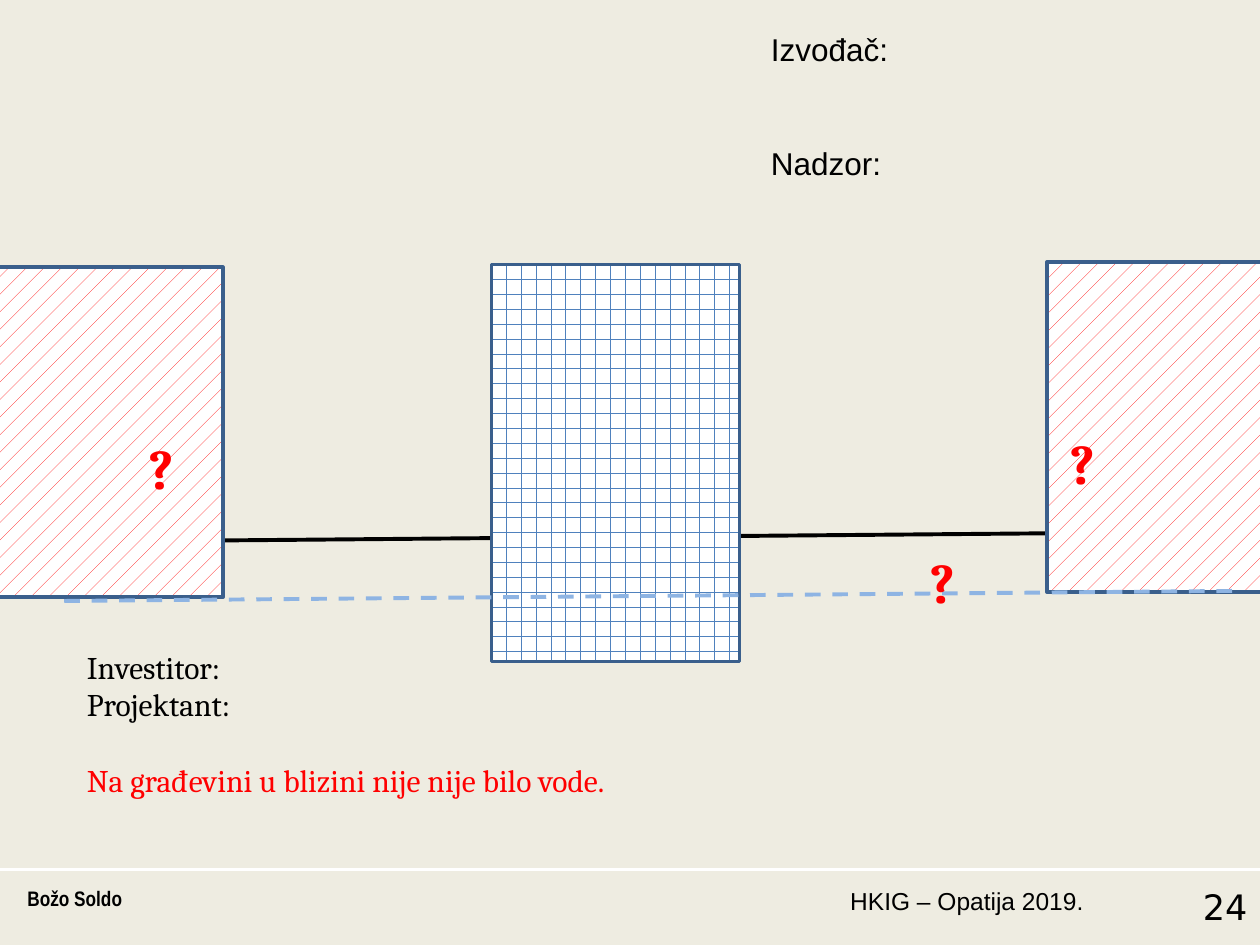
from lxml.etree import SubElement
from pptx import Presentation
from pptx.dml.color import RGBColor
from pptx.enum.dml import MSO_LINE, MSO_PATTERN
from pptx.enum.shapes import MSO_CONNECTOR, MSO_SHAPE
from pptx.enum.text import MSO_AUTO_SIZE, PP_ALIGN
from pptx.oxml.ns import qn
from pptx.util import Inches, Pt

COLORS = {
    "background": "EEECE1",
    "white": "FFFFFF",
    "black": "000000",
    "red": "FF0000",
    "blue": "4F81BD",
    "outline": "3A5F8C",
    "water": "8EB4E3",
}

FOOTERS = [
    ("HKIG – Opatija 2019.", 6.57, 2.13, "Arial", 14, False, PP_ALIGN.RIGHT),
    ("Božo Soldo", 0.12, 6.54, "Arial Narrow", 12, True, PP_ALIGN.LEFT),
    ("24", 8.78, 1.22, "DejaVu Sans", 20, False, PP_ALIGN.RIGHT),
]
FOOTER_TOP, FOOTER_HEIGHT = 6.98, 0.52

BUILDING_WIDTH = 1.97
BUILDINGS = [
    (3.9, 2.1, 3.15, MSO_PATTERN.HORIZONTAL_BRICK, "blue"),
    (-0.2, 2.12, 2.62, MSO_PATTERN.PERCENT_5, "red"),
    (8.31, 2.08, 2.62, MSO_PATTERN.PERCENT_5, "red"),
]

FOOTER_RULE = ((0, 6.9), (10, 6.9))
GROUND_LEVEL = ((0.51, 4.3), (9.8, 4.22))
WATER_LEVEL = ((0.51, 4.77), (9.8, 4.69))

QUESTION_MARKS = [(7.28, 4.3), (8.39, 3.35), (1.08, 3.39)]

NOTES = [
    ((6.02, 0.19, 2.13, 1.31), "Arial",
     [("Izvođač:", "black", 0), ("Nadzor:", "black", 43.5)]),
    ((0.59, 5.09, 4.92, 1.31), "Cambria",
     [("Investitor:", "black", 0), ("Projektant:", "black", 0),
      ("Na građevini u blizini nije nije bilo vode.", "red", 21.7)]),
]


def color(name):
    return RGBColor.from_string(COLORS[name])


def add_line(slide, ends, line_color, width, dash=None):
    (x1, y1), (x2, y2) = ends
    connector = slide.shapes.add_connector(
        MSO_CONNECTOR.STRAIGHT, Inches(x1), Inches(y1), Inches(x2), Inches(y2))
    connector.line.color.rgb = color(line_color)
    connector.line.width = Pt(width)
    if dash:
        connector.line.dash_style = dash
    SubElement(connector._element.spPr, qn("a:effectLst"))


def add_building(slide, left, top, height, pattern, pattern_color):
    shape = slide.shapes.add_shape(
        MSO_SHAPE.RECTANGLE, Inches(left), Inches(top), Inches(BUILDING_WIDTH), Inches(height))
    shape.shadow.inherit = False
    shape.fill.patterned()
    shape.fill.pattern = pattern
    shape.fill.fore_color.rgb = color(pattern_color)
    shape.fill.back_color.rgb = color("white")
    shape.line.color.rgb = color("outline")
    shape.line.width = Pt(2)


def add_text(slide, box, lines, font_name, size, bold=False,
             align=PP_ALIGN.LEFT, wrap=True, grow=True):
    frame = slide.shapes.add_textbox(*map(Inches, box)).text_frame
    frame.word_wrap = wrap
    frame.auto_size = MSO_AUTO_SIZE.SHAPE_TO_FIT_TEXT if grow else MSO_AUTO_SIZE.NONE
    for index, (text, text_color, gap) in enumerate(lines):
        paragraph = frame.add_paragraph() if index else frame.paragraphs[0]
        paragraph.text = text
        paragraph.alignment = align
        if gap:
            paragraph.space_before = Pt(gap)
        paragraph.font.name = font_name
        paragraph.font.size = Pt(size)
        paragraph.font.bold = bold
        paragraph.font.color.rgb = color(text_color)


def main():
    presentation = Presentation()
    presentation.slide_width, presentation.slide_height = Inches(10), Inches(7.5)
    slide = presentation.slides.add_slide(presentation.slide_layouts[6])
    slide.background.fill.solid()
    slide.background.fill.fore_color.rgb = color("background")

    add_line(slide, FOOTER_RULE, "white", 1.5)
    for text, left, width, font_name, size, bold, align in FOOTERS:
        add_text(slide, (left, FOOTER_TOP, width, FOOTER_HEIGHT), [(text, "black", 0)],
                 font_name, size, bold, align, grow=False)

    add_line(slide, GROUND_LEVEL, "black", 2.25)
    for building in BUILDINGS:
        add_building(slide, *building)
    add_line(slide, WATER_LEVEL, "water", 2.25, MSO_LINE.DASH)

    for left, top in QUESTION_MARKS:
        add_text(slide, (left, top, 0.41, 0.64), [("?", "red", 0)],
                 "Cambria", 32, bold=True, wrap=False)
    for box, font_name, lines in NOTES:
        add_text(slide, box, lines, font_name, 18)

    presentation.save("out.pptx")


if __name__ == "__main__":
    main()
